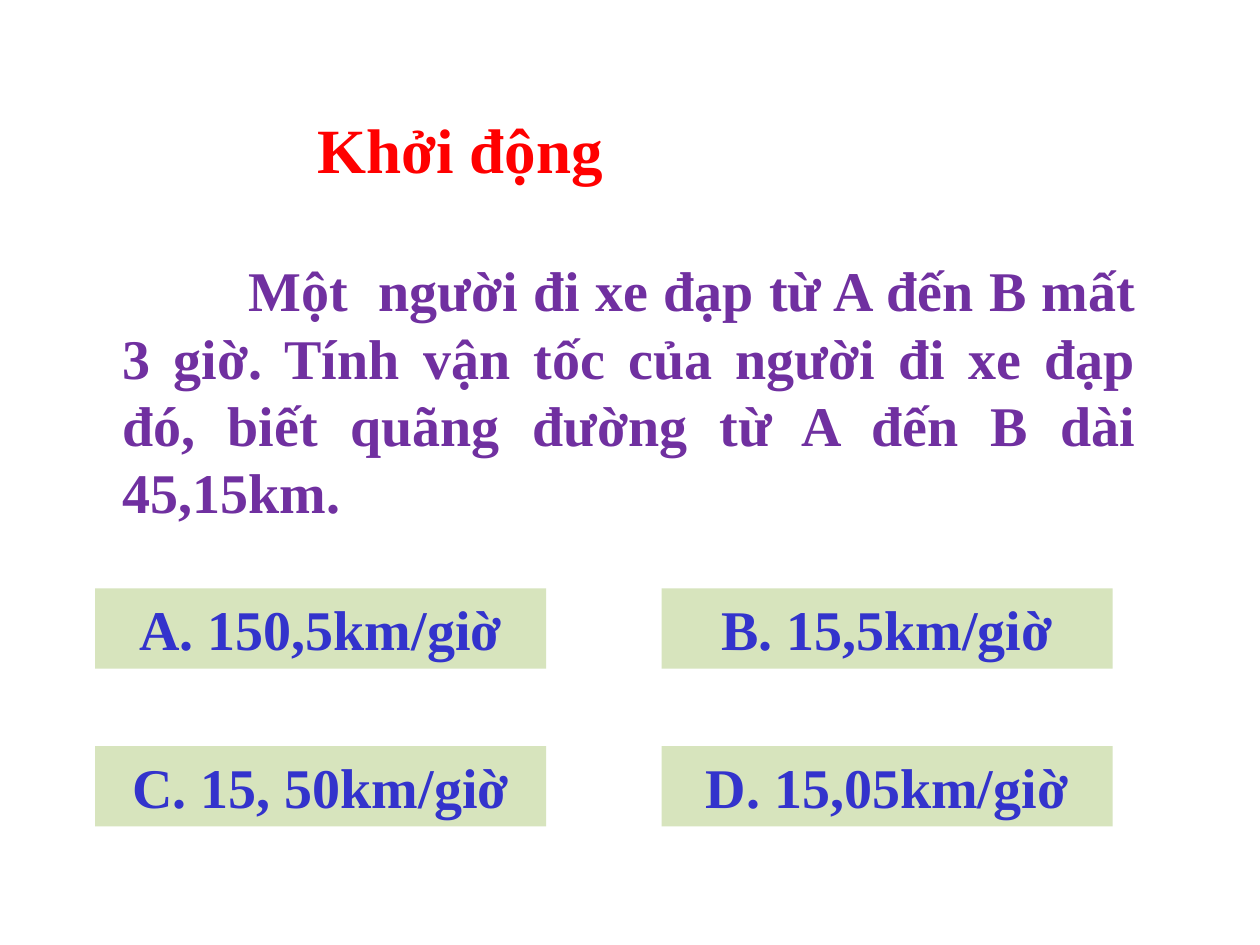
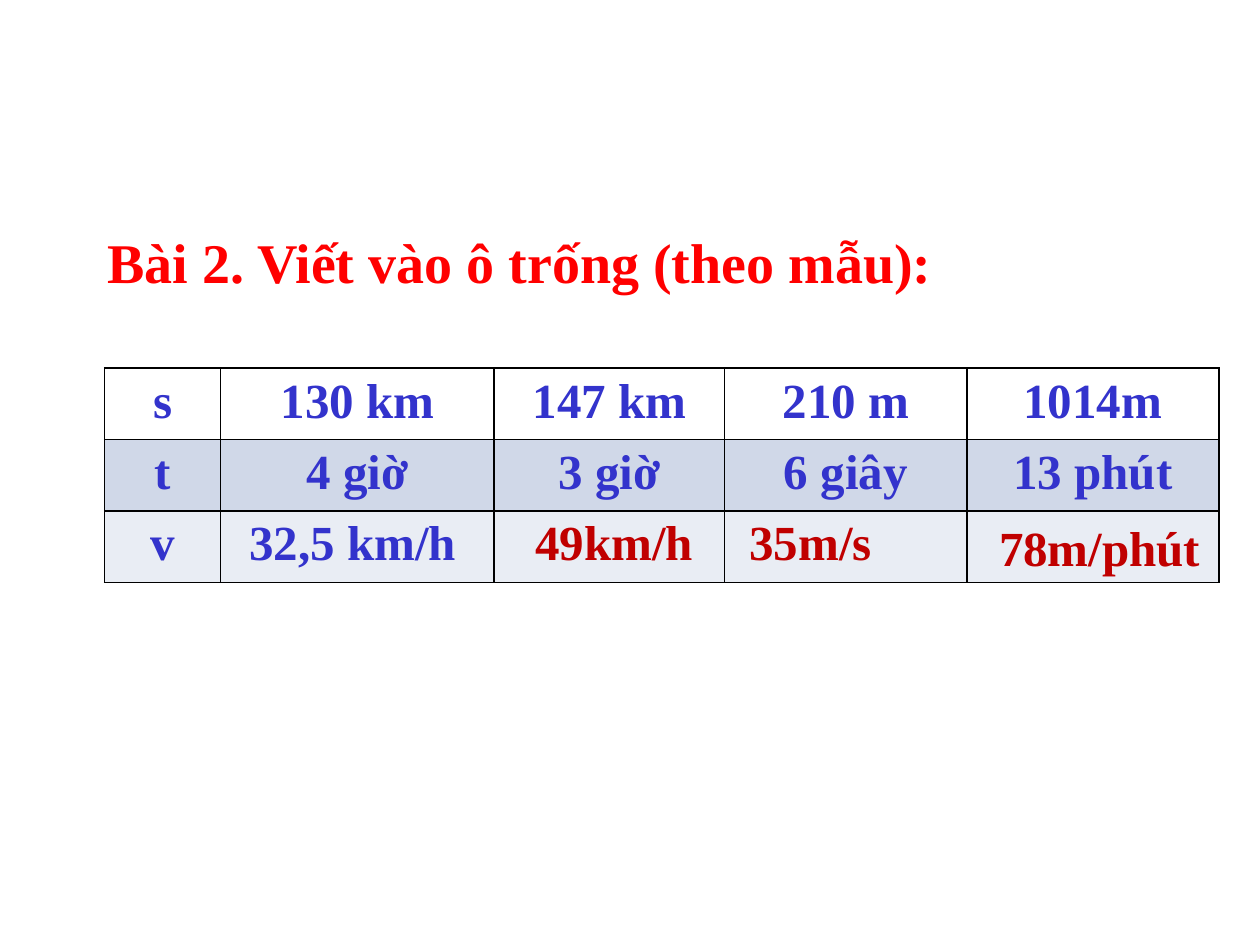
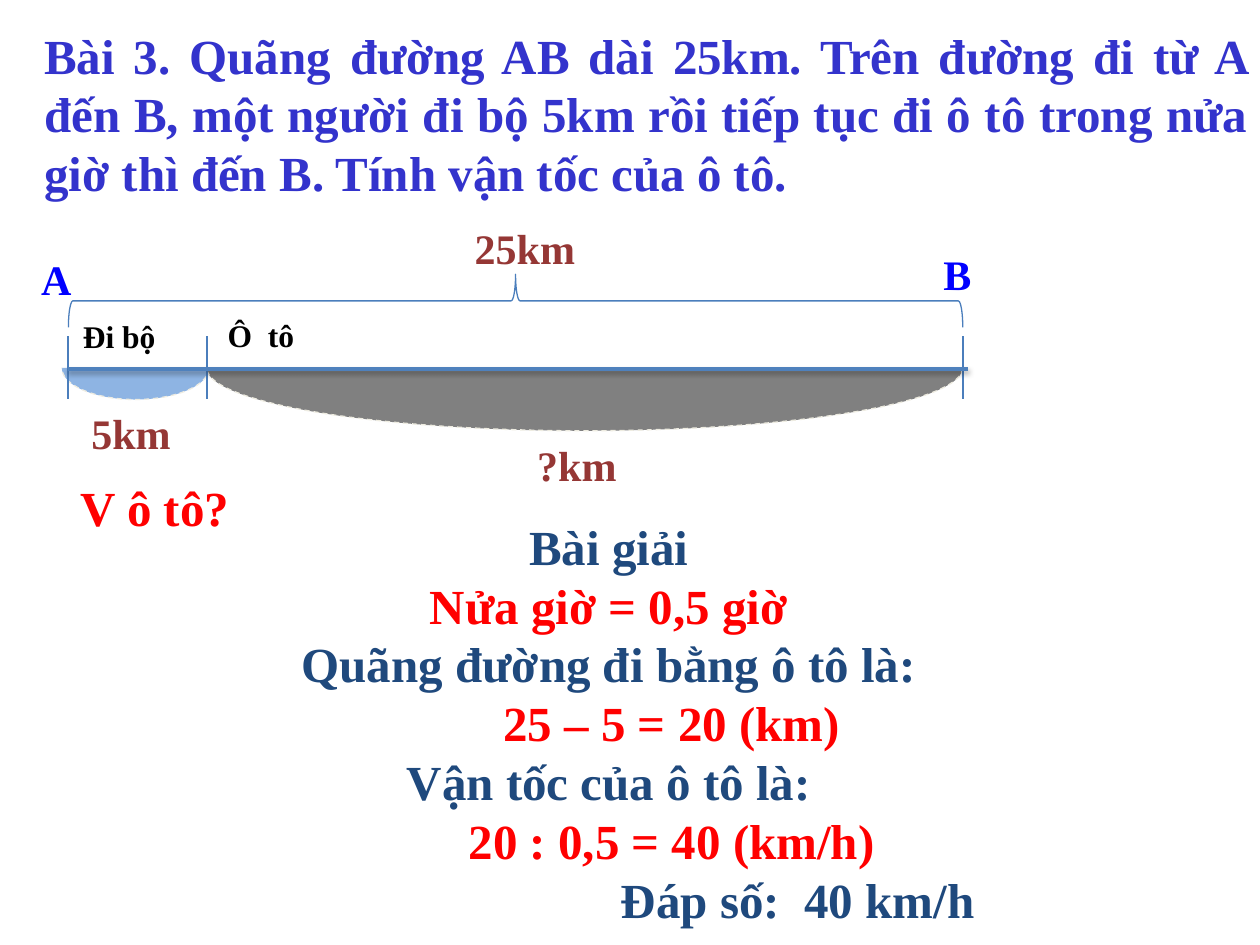
from lxml import etree
from pptx import Presentation
from pptx.dml.color import RGBColor
from pptx.enum.shapes import MSO_CONNECTOR, MSO_SHAPE
from pptx.enum.dml import MSO_LINE
from pptx.enum.text import MSO_ANCHOR, MSO_AUTO_SIZE, PP_ALIGN
from pptx.oxml.ns import qn
from pptx.util import Cm, Pt

FONT = "Times New Roman"
COLORS = {
    "red": "FF0000", "purple": "7030A0", "indigo": "3333CC", "crimson": "C00000",
    "brown": "953735", "navy": "1F497D", "blue": "0000FF", "black": "000000",
    "green_fill": "D7E4BD", "row_dark": "D0D8E8", "row_light": "E9EDF4",
    "walk": "8EB4E3", "car": "808080", "dash": "EEECE1",
    "tick": "4B7EBC", "road": "4F81BD",
}
LEFT, CENTER, JUSTIFY = PP_ALIGN.LEFT, PP_ALIGN.CENTER, PP_ALIGN.JUSTIFY
RECTANGLE = MSO_SHAPE.RECTANGLE
BRACKET, BRACE = MSO_SHAPE.RIGHT_BRACKET, MSO_SHAPE.RIGHT_BRACE
STRAIGHT = MSO_CONNECTOR.STRAIGHT
DASH = MSO_LINE.DASH
TOP = MSO_ANCHOR.TOP
NO_FIT = MSO_AUTO_SIZE.NONE
TITLE_AND_BODY, TITLE_ONLY = 1, 5


def rgb(name):
    return RGBColor.from_string(COLORS[name])


class Deck:
    """Holds the shared style and the current slide; lengths are in cm."""

    def __init__(self):
        self.presentation = Presentation()
        self.presentation.slide_width = Cm(25.4)
        self.presentation.slide_height = Cm(19.05)
        self.slide = None

    def new_slide(self, layout):
        layouts = self.presentation.slide_layouts
        self.slide = self.presentation.slides.add_slide(layouts[layout])

    def set_text(self, shape, lines, size, align=LEFT, wrap=True):
        """Each line is (text, color, left margin, first-line indent)."""
        frame = shape.text_frame
        frame.auto_size = NO_FIT
        frame.word_wrap = wrap
        frame.vertical_anchor = TOP
        for number, (text, color, margin, indent) in enumerate(lines):
            paragraph = frame.add_paragraph() if number else frame.paragraphs[0]
            self.format_paragraph(paragraph, align, margin, indent)
            self.add_run(paragraph, text, size, color)

    def format_paragraph(self, paragraph, align, margin=0, indent=0):
        paragraph.alignment = align
        paragraph.space_before = Pt(0)
        properties = paragraph._p.get_or_add_pPr()
        properties.set("marL", str(Cm(margin)))
        properties.set("indent", str(Cm(indent)))
        etree.SubElement(properties, qn("a:buNone"))

    def add_run(self, paragraph, text, size, color):
        run = paragraph.add_run()
        run.text = text
        run.font.name = FONT
        run.font.size = Pt(size)
        run.font.bold = True
        run.font.color.rgb = rgb(color)

    def place(self, shape, box):
        shape.left, shape.top, shape.width, shape.height = map(Cm, box)

    def title(self, text, box, size, color="red", align=LEFT):
        shape = self.slide.shapes.title
        self.place(shape, box)
        self.set_text(shape, [(text, color, 0, 0)], size, align)

    def body(self, lines, box, size, align):
        shape = self.slide.placeholders[1]
        self.place(shape, box)
        self.set_text(shape, lines, size, align)

    def label(self, text, box, size, color, align=LEFT, wrap=True):
        shape = self.slide.shapes.add_textbox(*map(Cm, box))
        self.set_text(shape, [(text, color, 0, 0)], size, align, wrap)

    def shape(self, kind, box, fill=None, line=None, rotation=0, dash=None):
        shape = self.slide.shapes.add_shape(kind, *map(Cm, box))
        shape.shadow.inherit = False
        shape.rotation = rotation
        if fill:
            shape.fill.solid()
            shape.fill.fore_color.rgb = rgb(fill)
        else:
            shape.fill.background()
        if line:
            shape.line.color.rgb = rgb(line)
            shape.line.width = Pt(0.75)
            shape.line.dash_style = dash
        else:
            shape.line.fill.background()
        return shape

    def line(self, start, end, color, width, shadow=False):
        connector = self.slide.shapes.add_connector(
            STRAIGHT, *map(Cm, start + end))
        connector.line.color.rgb = rgb(color)
        connector.line.width = Pt(width)
        effects = etree.SubElement(connector._element.spPr, qn("a:effectLst"))
        if shadow:
            outer = etree.SubElement(
                effects, qn("a:outerShdw"), blurRad=str(Pt(3.1)),
                dist=str(Pt(1.6)), dir="5400000", rotWithShape="0")
            tint = etree.SubElement(outer, qn("a:srgbClr"), val=COLORS["black"])
            etree.SubElement(tint, qn("a:alpha"), val="38000")

    def table(self, rows, fills, left, top, widths, row_height, size, color):
        table = self.slide.shapes.add_table(
            len(rows), len(widths), Cm(left), Cm(top),
            Cm(sum(widths)), Cm(row_height * len(rows))).table
        table.first_row = table.horz_banding = False
        for column, width in zip(table.columns, widths):
            column.width = Cm(width)
        for row, texts, fill in zip(table.rows, rows, fills):
            row.height = Cm(row_height)
            for cell, text in zip(row.cells, texts):
                if fill:
                    cell.fill.solid()
                    cell.fill.fore_color.rgb = rgb(fill)
                else:
                    cell.fill.background()
                self.cell_borders(cell)
                if text:
                    paragraph = cell.text_frame.paragraphs[0]
                    paragraph.alignment = CENTER
                    self.add_run(paragraph, text, size, color)

    def cell_borders(self, cell):
        properties = cell._tc.get_or_add_tcPr()
        for position, side in enumerate(("lnL", "lnR", "lnT", "lnB")):
            border = etree.Element(qn("a:" + side), w=str(Pt(1)))
            solid = etree.SubElement(border, qn("a:solidFill"))
            etree.SubElement(solid, qn("a:srgbClr"), val=COLORS["black"])
            properties.insert(position, border)


def build_warm_up(deck):
    deck.new_slide(TITLE_AND_BODY)
    deck.title("Khởi động", (6.15, 2.11, 13.77, 1.8), 36)
    question = ("Một  người đi xe đạp từ A đến B mất 3 giờ. Tính vận tốc của "
                "người đi xe đạp đó, biết quãng đường từ A đến B dài 45,15km.")
    deck.body([(question, "purple", 0, 2.54)],
              (2.21, 5.03, 20.96, 5.74), 32, JUSTIFY)

    # Answer grid, two by two
    answers = ("A. 150,5km/giờ", "B. 15,5km/giờ",
               "C. 15, 50km/giờ", "D. 15,05km/giờ")
    for number, answer in enumerate(answers):
        row, column = divmod(number, 2)
        box = (1.92 + 11.42 * column, 11.86 + 3.18 * row, 9.09, 1.62)
        shape = deck.shape(RECTANGLE, box, "green_fill")
        deck.set_text(shape, [(answer, "indigo", 0, 0)], 32, CENTER)


def build_table_exercise(deck):
    deck.new_slide(TITLE_ONLY)
    deck.title("Bài 2. Viết vào ô trống (theo mẫu):",
               (1.91, 4.45, 18.85, 1.63), 32)
    rows = (("s", "130 km", "147 km", "210 m", "1014m"),
            ("t", "4 giờ", "3 giờ", "6 giây", "13 phút"),
            ("v", "", "", "", ""))
    deck.table(rows, (None, "row_dark", "row_light"), 2.11, 7.42,
               (2.34, 5.51, 4.65, 4.88, 5.08), 1.44, 28, "indigo")

    # Speeds laid over the last row
    speeds = (("32,5 km/h", 4.75, 10.19, 4.72, "indigo", CENTER),
              ("49km/h", 10.52, 10.19, 3.73, "crimson", CENTER),
              ("35m/s", 14.86, 10.19, 3, "crimson", LEFT),
              ("78m/phút", 19.89, 10.31, 4.62, "crimson", LEFT))
    for text, left, top, width, color, align in speeds:
        deck.label(text, (left, top, width, 1.45), 28, color, align, wrap=False)


def build_road_problem(deck):
    deck.new_slide(TITLE_AND_BODY)
    deck.title("Bài 3. Quãng đường AB dài 25km. Trên đường đi từ A đến B, một "
               "người đi bộ 5km rồi tiếp tục đi ô tô trong nửa giờ thì đến B. "
               "Tính vận tốc của ô tô.",
               (0.64, 0.38, 24.77, 3.84), 28, "indigo", JUSTIFY)

    # Worked solution
    solution = (("Bài giải", "navy", 0, 0),
                ("Nửa giờ = 0,5 giờ", "red", 0, 0),
                ("Quãng đường đi bằng ô tô là:", "navy", 0, 0),
                ("25 – 5 = 20 (km)", "red", 2.54, 0),
                ("Vận tốc của ô tô là:", "navy", 0, 0),
                ("20 : 0,5 = 40 (km/h)", "red", 2.54, 0),
                ("Đáp số:  40 km/h", "navy", 7.62, 0))
    deck.body(solution, (3.28, 10.28, 17.98, 8.69), 28, CENTER)

    # Stretches of road and the brace over the whole
    stretches = (((2.41, 6.25, 0.64, 2.97), "walk"),
                 ((11.15, 0.43, 1.27, 15.24), "car"))
    for box, fill in stretches:
        bracket = deck.shape(BRACKET, box, fill, "dash", 90, DASH)
        bracket.adjustments[0] = box[3] / box[2] / 2
    deck.shape(BRACE, (9.86, -2.95, 1.07, 18.03), line="tick", rotation=270)

    # Road line with its ticks
    for x in (1.37, 4.17, 19.41):
        deck.line((x, 6.78), (x, 8.05), "tick", 0.75)
    deck.line((1.37, 7.44), (19.51, 7.44), "road", 2, shadow=True)

    # Labels
    labels = (("25km", (9.32, 4.37, 4.01, 1.27), 24, "brown", LEFT),
              ("?km", (10.26, 8.74, 2.74, 1.27), 24, "brown", CENTER),
              ("5km", (1.27, 8.1, 2.74, 1.27), 24, "brown", CENTER),
              ("A", (0.58, 4.98, 1.27, 1.27), 24, "blue", LEFT),
              ("B", (18.77, 4.88, 1.27, 1.27), 24, "blue", LEFT),
              ("V ô tô?", (1.37, 9.5, 3.81, 1.45), 28, "red", LEFT),
              ("Đi bộ", (1.42, 6.27, 2.79, 1.02), 18, "black", LEFT),
              ("Ô  tô", (4.34, 6.25, 2.31, 1.02), 18, "black", LEFT))
    for label in labels:
        deck.label(*label)


def main():
    deck = Deck()
    build_warm_up(deck)
    build_table_exercise(deck)
    build_road_problem(deck)
    deck.presentation.save("out.pptx")


if __name__ == "__main__":
    main()
